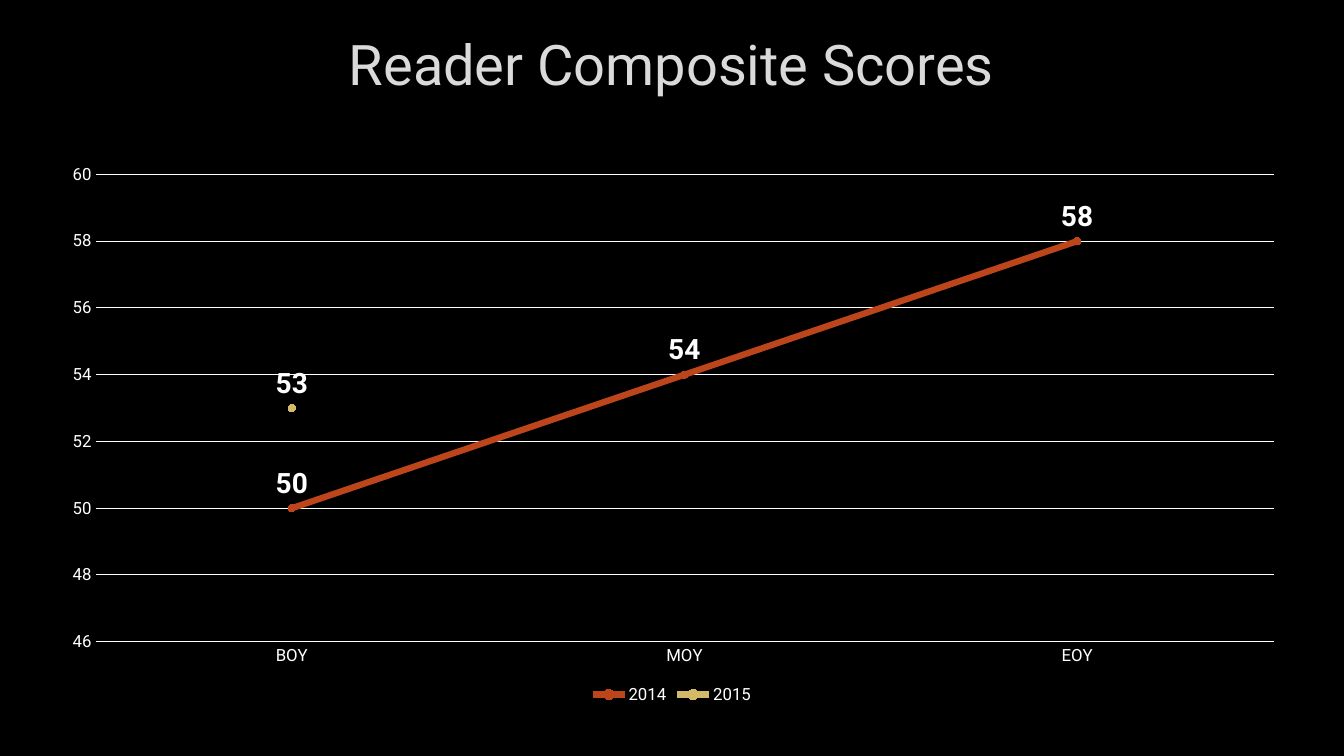
import pptx
import pptx.chart.data
import pptx.dml.color
import pptx.enum.chart
import pptx.enum.text
import pptx.oxml
import pptx.oxml.ns
import pptx.util
from pptx.util import Inches

# Content
TITLE = "Reader Composite Scores"
PERIODS = ["BOY", "MOY", "EOY"]
SCORES = {"2014": [50, 54, 58], "2015": [53, None, None]}
SCALE = dict(minimum_scale=46, maximum_scale=60, major_unit=2)

THEME = dict(
    font="Roboto", background="000000", title="DADADA", text="FFFFFF",
    series=["BC451B", "D3BA68"],
    title_size=40, label_size=20, axis_size=12, chart_size=10,
    grid_width=0.75, line_width=4.5, marker_size=5,
)
PLOT_AREA = dict(x=0.04, y=0.04, w=0.94, h=0.84)  # shares of the chart frame


def rgb(color):
    return pptx.dml.color.RGBColor.from_string(color)


def set_font(font, size, color=THEME["text"], bold=False):
    font.name, font.size, font.bold = THEME["font"], pptx.util.Pt(size), bold
    font.color.rgb = rgb(color)


def set_line(line, color, width):
    line.color.rgb = rgb(color)
    line.width = pptx.util.Pt(width)


def add_text(s, text, box, size, color, align, anchor):
    tf = s.shapes.add_textbox(*map(Inches, box)).text_frame
    tf.word_wrap = True
    tf.vertical_anchor = anchor
    p = tf.paragraphs[0]
    p.alignment = align
    r = p.add_run()
    r.text = text
    set_font(r.font, size, color)


def place_plot(chart, shares):
    area = chart._chartSpace.chart.plotArea
    for old in area.findall(pptx.oxml.ns.qn("c:layout")):
        area.remove(old)
    parts = "".join(f'<c:{k} val="{v}"/>' for k, v in shares.items())
    area.insert(0, pptx.oxml.parse_xml(
        f'<c:layout {pptx.oxml.ns.nsdecls("c")}><c:manualLayout>'
        '<c:layoutTarget val="inner"/><c:xMode val="edge"/><c:yMode val="edge"/>'
        f"{parts}</c:manualLayout></c:layout>"))


def style_series(series, color):
    series.smooth = False
    set_line(series.format.line, color, THEME["line_width"])
    marker = series.marker
    marker.style = pptx.enum.chart.XL_MARKER_STYLE.CIRCLE
    marker.size = THEME["marker_size"]
    marker.format.fill.solid()
    marker.format.fill.fore_color.rgb = rgb(color)
    marker.format.line.color.rgb = rgb(color)
    labels = series.data_labels
    labels.show_value = True
    labels.position = pptx.enum.chart.XL_LABEL_POSITION.ABOVE
    set_font(labels.font, THEME["label_size"], bold=True)


def add_score_chart(s, box):
    data = pptx.chart.data.CategoryChartData()
    data.categories = PERIODS
    for name, values in SCORES.items():
        data.add_series(name, values)
    chart = s.shapes.add_chart(pptx.enum.chart.XL_CHART_TYPE.LINE_MARKERS,
                               *map(Inches, box), data).chart
    chart.has_title = False
    set_font(chart.font, THEME["chart_size"])
    place_plot(chart, PLOT_AREA)
    chart.plots[0].vary_by_categories = False
    for series, color in zip(chart.plots[0].series, THEME["series"]):
        style_series(series, color)

    # Axes and gridlines
    periods, scores = chart.category_axis, chart.value_axis
    for axis in (periods, scores):
        axis.major_tick_mark = pptx.enum.chart.XL_TICK_MARK.NONE
        axis.minor_tick_mark = pptx.enum.chart.XL_TICK_MARK.NONE
        set_font(axis.tick_labels.font, THEME["axis_size"])
    for key, value in SCALE.items():
        setattr(scores, key, value)
    scores.format.line.fill.background()
    for line in (periods.format.line, scores.major_gridlines.format.line):
        set_line(line, THEME["text"], THEME["grid_width"])

    # Legend
    chart.has_legend = True
    chart.legend.position = pptx.enum.chart.XL_LEGEND_POSITION.BOTTOM
    chart.legend.include_in_layout = False
    set_font(chart.legend.font, THEME["axis_size"])


def main():
    prs = pptx.Presentation()
    prs.slide_width, prs.slide_height = Inches(13.33), Inches(7.5)
    s = prs.slides.add_slide(prs.slide_layouts[6])
    s.background.fill.solid()
    s.background.fill.fore_color.rgb = rgb(THEME["background"])
    add_text(s, TITLE, (1, 0.1, 11.32, 1.06),
             size=THEME["title_size"], color=THEME["title"],
             align=pptx.enum.text.PP_ALIGN.CENTER,
             anchor=pptx.enum.text.MSO_ANCHOR.MIDDLE)
    add_score_chart(s, (0.45, 1.51, 12.43, 5.52))
    prs.save("out.pptx")


if __name__ == "__main__":
    main()
